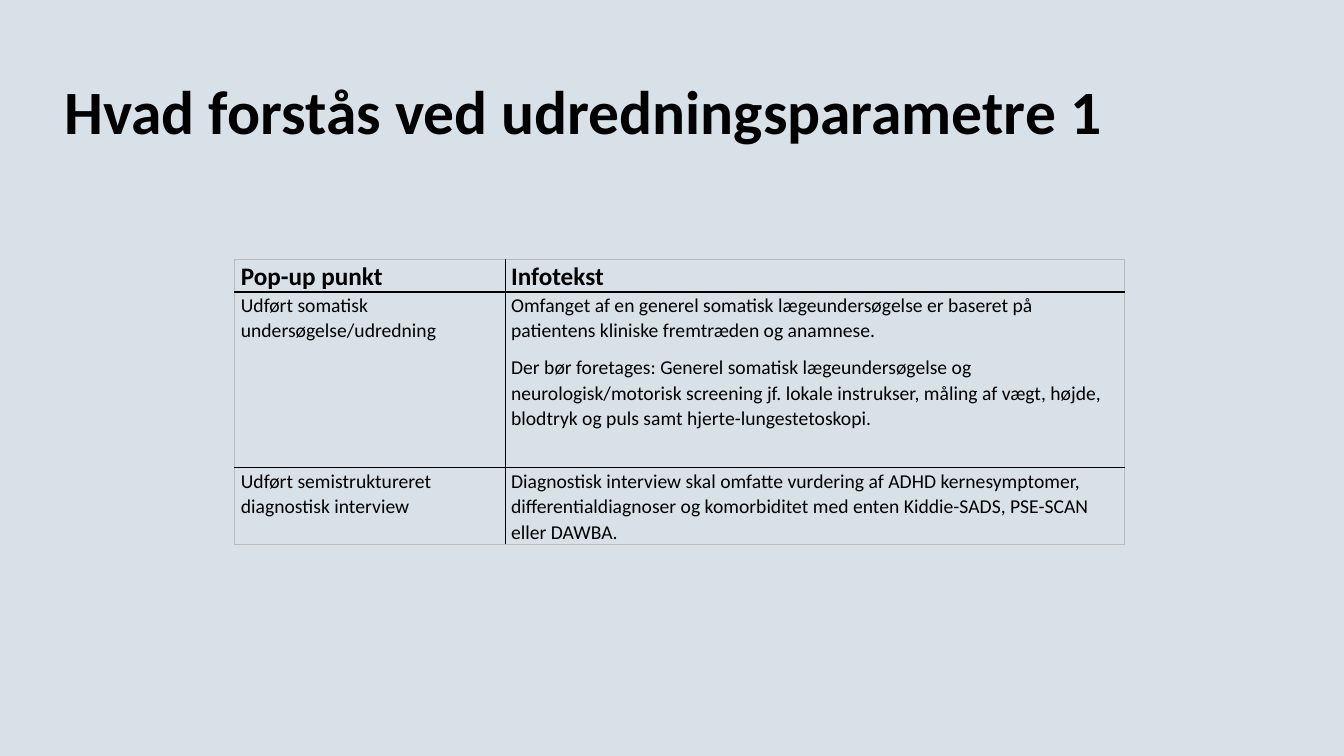
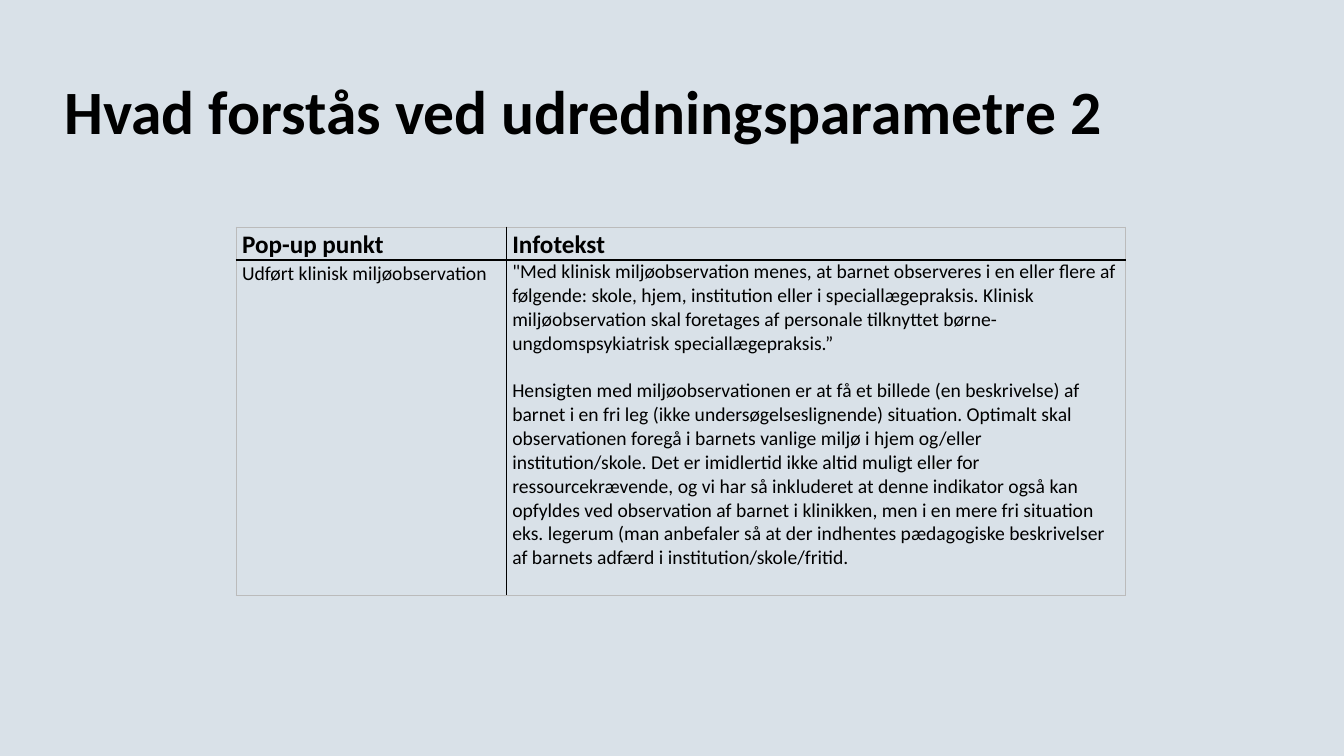
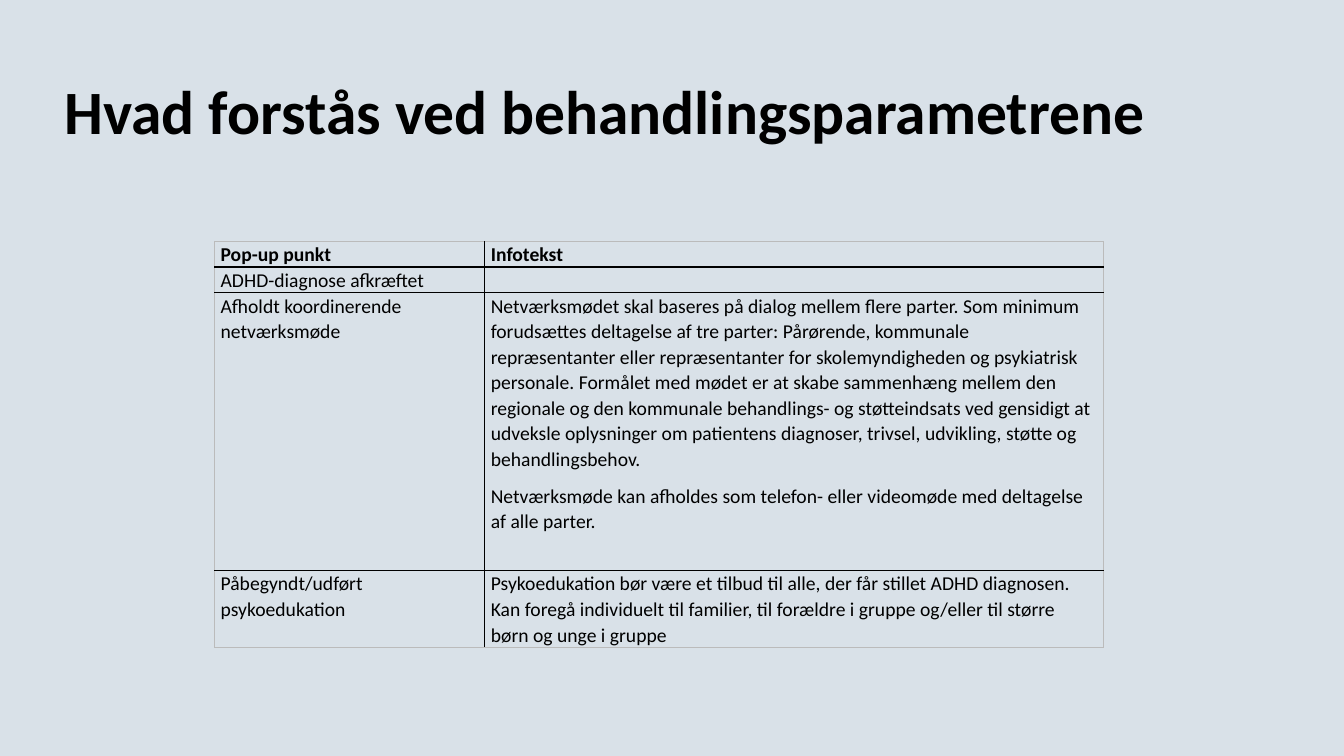
from lxml import etree
from pptx import Presentation
from pptx.dml.color import RGBColor
from pptx.enum.text import MSO_ANCHOR, MSO_AUTO_SIZE, PP_ALIGN
from pptx.oxml.ns import qn
from pptx.util import Cm, Pt

TOP, MIDDLE = MSO_ANCHOR.TOP, MSO_ANCHOR.MIDDLE
NO_FIT, LEFT = MSO_AUTO_SIZE.NONE, PP_ALIGN.LEFT

FONT = "Calibri"
BACKGROUND, INK, FRAME = "D9E1E8", "000000", "BBBBBB"
TITLE_BOX = (1.37, 1.9, 31.14, 1.96)
COLUMNS = (6.81, 15.6)
BODY_SIZE = 14
LOOSE = dict(line_spacing=1.07, space_after=Pt(8))
PLAIN = dict(line_spacing=1.0, space_after=Pt(17))
HEADER = (["Pop-up punkt"], ["Infotekst"])

# Content: each cell is a list of paragraphs, lengths are in cm
SLIDES = [
    dict(
        title="Hvad forstås ved udredningsparametre 1",
        at=(5.92, 6.53), heights=(0.83, 4.43, 1.93), header_size=18, info=LOOSE,
        rows=[
            (["Udført somatisk undersøgelse/udredning"],
             ["Omfanget af en generel somatisk lægeundersøgelse er baseret på "
              "patientens kliniske fremtræden og anamnese.",
              "Der bør foretages: Generel somatisk lægeundersøgelse og "
              "neurologisk/motorisk screening jf. lokale instrukser, måling af "
              "vægt, højde, blodtryk og puls samt hjerte-lungestetoskopi."]),
            (["Udført semistruktureret diagnostisk interview"],
             ["Diagnostisk interview skal omfatte vurdering af ADHD "
              "kernesymptomer, differentialdiagnoser og komorbiditet med enten "
              "Kiddie-SADS, PSE-SCAN eller DAWBA."]),
        ],
    ),
    dict(
        title="Hvad forstås ved udredningsparametre 2",
        at=(5.95, 5.72), heights=(0.83, 8.45), header_size=18, info=PLAIN,
        rows=[
            (["Udført klinisk miljøobservation"],
             ['"Med klinisk miljøobservation menes, at barnet observeres i en '
              "eller flere af følgende: skole, hjem, institution eller i "
              "speciallægepraksis. Klinisk miljøobservation skal foretages af "
              "personale tilknyttet børne- ungdomspsykiatrisk "
              "speciallægepraksis.”",
              "Hensigten med miljøobservationen er at få et billede (en "
              "beskrivelse) af barnet i en fri leg (ikke "
              "undersøgelseslignende) situation. Optimalt skal observationen "
              "foregå i barnets vanlige miljø i hjem og/eller "
              "institution/skole. Det er imidlertid ikke altid muligt eller "
              "for ressourcekrævende, og vi har så inkluderet at denne "
              "indikator også kan opfyldes ved observation af barnet i "
              "klinikken, men i en mere fri situation eks. legerum (man "
              "anbefaler så at der indhentes pædagogiske beskrivelser af "
              "barnets adfærd i institution/skole/fritid."]),
        ],
    ),
    dict(
        title="Hvad forstås ved behandlingsparametrene",
        at=(5.41, 6.08), heights=(0.65, 0.65, 7.0, 1.93), header_size=14, info=LOOSE,
        rows=[
            (["ADHD-diagnose afkræftet"], []),
            (["Afholdt koordinerende netværksmøde"],
             ["Netværksmødet skal baseres på dialog mellem flere parter. Som "
              "minimum forudsættes deltagelse af tre parter: Pårørende, "
              "kommunale repræsentanter eller repræsentanter for "
              "skolemyndigheden og psykiatrisk personale. Formålet med mødet "
              "er at skabe sammenhæng mellem den regionale og den kommunale "
              "behandlings- og støtteindsats ved gensidigt at udveksle "
              "oplysninger om patientens diagnoser, trivsel, udvikling, støtte "
              "og behandlingsbehov.",
              "Netværksmøde kan afholdes som telefon- eller videomøde med "
              "deltagelse af alle parter."]),
            (["Påbegyndt/udført psykoedukation"],
             ["Psykoedukation bør være et tilbud til alle, der får stillet "
              "ADHD diagnosen. Kan foregå individuelt til familier, til "
              "forældre i gruppe og/eller til større børn og unge i gruppe"]),
        ],
    ),
]


def rgb(value):
    return RGBColor.from_string(value)


def apply(target, formats):
    for name, value in formats.items():
        setattr(target, name, value)


def write(p, text, size, bold, spacing):
    apply(p, dict(alignment=LEFT, **spacing))
    r = p.add_run()
    r.text = text
    apply(r.font, dict(name=FONT, size=Pt(size), bold=bold))
    r.font.color.rgb = rgb(INK)


def set_border(cell, side, color, width):
    ln = etree.SubElement(cell._tc.get_or_add_tcPr(), qn("a:ln" + side),
                          w=str(Pt(width)))
    fill = etree.SubElement(ln, qn("a:solidFill"))
    etree.SubElement(fill, qn("a:srgbClr"), val=color)


def fill_cell(cell, paragraphs, size, bold, spacing):
    tf = cell.text_frame
    for i, text in enumerate(paragraphs):
        p = tf.add_paragraph() if i else tf.paragraphs[0]
        write(p, text, size, bold, spacing)
    if not paragraphs:
        etree.SubElement(tf.paragraphs[0]._p, qn("a:endParaRPr"), sz=str(size * 100))


def add_info_table(s, data):
    rows = [HEADER] + data["rows"]
    heights = data["heights"]
    frame = s.shapes.add_table(
        len(rows), len(COLUMNS), *map(Cm, data["at"]),
        Cm(sum(COLUMNS)), Cm(sum(heights)))
    table = frame.table
    apply(table, dict(first_row=False, horz_banding=False))
    for column, width in zip(table.columns, COLUMNS):
        column.width = Cm(width)
    for row, height in zip(table.rows, heights):
        row.height = Cm(height)

    last_row, last_col = len(rows) - 1, len(COLUMNS) - 1
    for i, row in enumerate(rows):
        for j, paragraphs in enumerate(row):
            cell = table.cell(i, j)
            apply(cell, dict(margin_left=Cm(0.15), margin_right=Cm(0.15),
                             margin_top=0, margin_bottom=0, vertical_anchor=TOP))
            # Pale frame outside, black rules inside
            outside = dict(L=j == 0, R=j == last_col, T=i == 0, B=i == last_row)
            for side, is_outside in outside.items():
                set_border(cell, side, *((FRAME, 0.75) if is_outside else (INK, 1)))
            cell.fill.background()
            size = BODY_SIZE if i else data["header_size"]
            spacing = data["info"] if i and j else LOOSE
            fill_cell(cell, paragraphs, size, i == 0, spacing)


def add_title(s, text):
    tf = s.shapes.title.text_frame
    apply(tf, dict(word_wrap=True, auto_size=NO_FIT, vertical_anchor=MIDDLE))
    write(tf.paragraphs[0], text, 44, True, dict(line_spacing=0.9))


def main():
    prs = Presentation()
    prs.slide_width, prs.slide_height = Cm(33.87), Cm(19.05)

    # Shared background and title position
    fill = prs.slide_master.background.fill
    fill.solid()
    fill.fore_color.rgb = rgb(BACKGROUND)
    layout = prs.slide_layouts.get_by_name("Title Only")
    apply(layout.placeholders[0],
          dict(zip(("left", "top", "width", "height"), map(Cm, TITLE_BOX))))

    for data in SLIDES:
        s = prs.slides.add_slide(layout)
        add_title(s, data["title"])
        add_info_table(s, data)
    prs.save("out.pptx")


if __name__ == "__main__":
    main()
